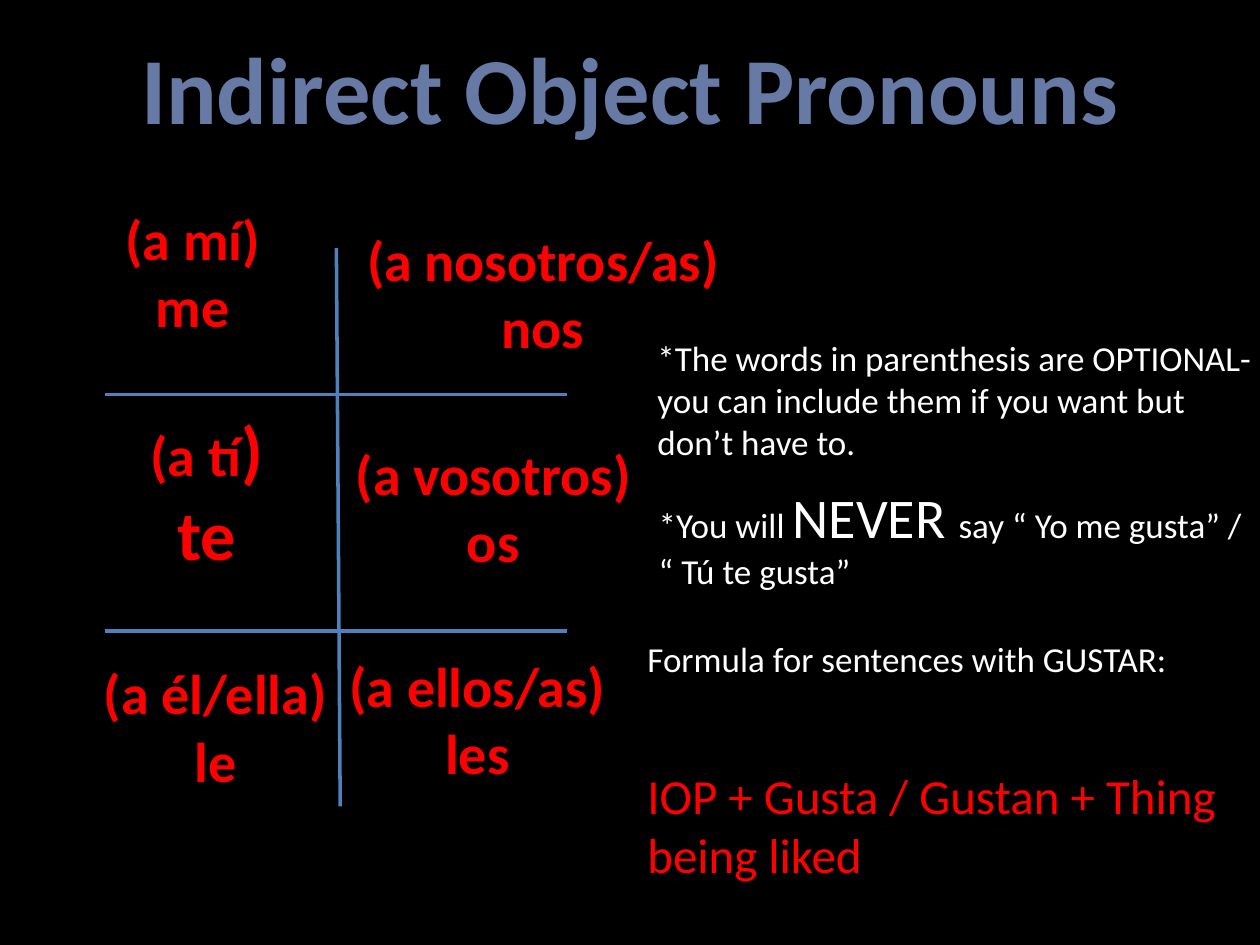
from lxml.etree import SubElement
from pptx import Presentation
from pptx.dml.color import RGBColor
from pptx.enum.shapes import MSO_CONNECTOR
from pptx.enum.text import MSO_ANCHOR, MSO_AUTO_SIZE, PP_ALIGN
from pptx.oxml.ns import qn
from pptx.util import Inches, Pt

THEME = {
    "font": "Calibri",
    "background": RGBColor(0x00, 0x00, 0x00),
    "title": RGBColor(0x67, 0x7A, 0xA5),
    "accent": RGBColor(0xFF, 0x00, 0x00),
    "note": RGBColor(0xFF, 0xFF, 0xFF),
    "rule": RGBColor(0x4F, 0x81, 0xBD),
    "title_size": 54,
    "large_size": 40,
    "pronoun_size": 32,
    "formula_size": 28,
    "note_size": 20,
    "rule_width": 2,
}

deck = Presentation()
deck.slide_width, deck.slide_height = Inches(10), Inches(7.5)
# The slide is a grid of 100 columns by 75 rows
COL, ROW = deck.slide_width / 100, deck.slide_height / 75

slide = deck.slides.add_slide(deck.slide_layouts[5])
slide.background.fill.solid()
slide.background.fill.fore_color.rgb = THEME["background"]


def place(box, left, top, width, height, wrap):
    """Put a text shape on the grid and return its text frame."""
    box.left, box.top = round(left * COL), round(top * ROW)
    box.width, box.height = round(width * COL), round(height * ROW)
    frame = box.text_frame
    frame.word_wrap = wrap
    frame.auto_size = MSO_AUTO_SIZE.SHAPE_TO_FIT_TEXT
    frame.vertical_anchor = MSO_ANCHOR.TOP
    return frame


def write(paragraph, pieces, color, bold=False, align=PP_ALIGN.LEFT):
    """Fill a paragraph with (text, size) pieces."""
    paragraph.alignment = align
    for text, size in pieces:
        run = paragraph.add_run()
        run.text = text
        run.font.name = THEME["font"]
        run.font.size = Pt(size)
        run.font.bold = bold
        run.font.color.rgb = color


# Title
title = place(slide.shapes.title, 9.7, 1.9, 80.6, 10.1, False)
write(title.paragraphs[0], [("Indirect Object Pronouns", THEME["title_size"])],
      THEME["title"], True, PP_ALIGN.CENTER)

# Rules between the pronouns: one upright, two across
rules = [(26.7, 19.7, 27, 64)] + [(45, row, 8.3, row) for row in (31.3, 50.1)]
for x1, y1, x2, y2 in rules:
    rule = slide.shapes.add_connector(
        MSO_CONNECTOR.STRAIGHT,
        round(x1 * COL), round(y1 * ROW), round(x2 * COL), round(y2 * ROW))
    rule.line.color.rgb = THEME["rule"]
    rule.line.width = Pt(THEME["rule_width"])
    SubElement(rule._element.spPr, qn("a:effectLst"))

# Pronouns: the optional phrase above, the pronoun below
normal, large = THEME["pronoun_size"], THEME["large_size"]
pronouns = [
    (8.9, 15.7, 12.8, 11.8, [("(a mí)", normal)], ("me", normal)),
    (10.9, 31.8, 11, 14.5, [("(a tí", normal), (")", large)], ("te", large)),
    (7.1, 51.8, 20, 11.8, [("(a él/ella)", normal)], ("le", normal)),
    (27.9, 17.4, 30.4, 11.8, [("(a nosotros/as)", normal)], ("nos", normal)),
    (27.1, 34.4, 24.1, 11.8, [("(a vosotros)", normal)], ("os", normal)),
    (26.6, 51.2, 22.6, 11.8, [("(a ellos/as)", normal)], ("les", normal)),
]
for left, top, width, height, phrase, pronoun in pronouns:
    cell = place(slide.shapes.add_textbox(0, 0, 0, 0), left, top, width, height, False)
    write(cell.paragraphs[0], phrase, THEME["accent"], True, PP_ALIGN.CENTER)
    write(cell.add_paragraph(), [pronoun], THEME["accent"], True, PP_ALIGN.CENTER)

# Notes and formula heading on the right
small = THEME["note_size"]
notes = [
    (51.2, 26.2, 11.1, [("*The words in parenthesis are OPTIONAL- you can include "
                         "them if you want but don’t have to.", small)]),
    (51.3, 37.8, 9.8, [("*You will ", small), ("NEVER ", normal),
                       ("say “ Yo me gusta” / “ Tú te gusta”", small)]),
    (50.4, 50.1, 20.5, [("Formula for sentences with GUSTAR:", small)]),
]
for left, top, height, pieces in notes:
    note = place(slide.shapes.add_textbox(0, 0, 0, 0), left, top, 49.6, height, True)
    write(note.paragraphs[0], pieces, THEME["note"])

# Formula, under the heading in the last note
formula = note.add_paragraph()
formula.space_before = Pt(49)
write(formula, [("IOP + Gusta / Gustan + Thing being liked", THEME["formula_size"])],
      THEME["accent"])

deck.save("out.pptx")
